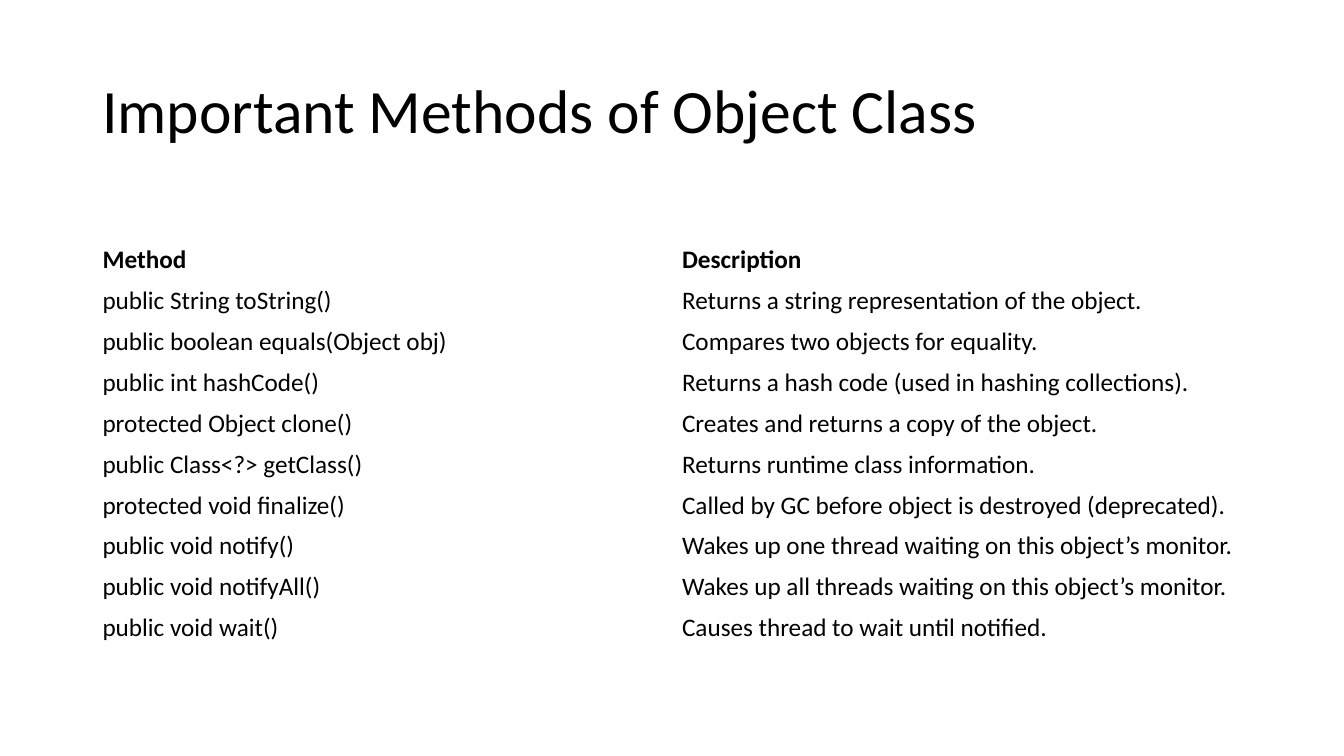
from pptx import Presentation
from pptx.dml.color import RGBColor
from pptx.enum import text
from pptx.util import Cm, Pt

# Content
HEADING = "Important Methods of Object Class"
METHODS = [
    ("Method", "Description"),
    ("public String toString()", "Returns a string representation of the object."),
    ("public boolean equals(Object obj)", "Compares two objects for equality."),
    ("public int hashCode()", "Returns a hash code (used in hashing collections)."),
    ("protected Object clone()", "Creates and returns a copy of the object."),
    ("public Class<?> getClass()", "Returns runtime class information."),
    ("protected void finalize()", "Called by GC before object is destroyed (deprecated)."),
    ("public void notify()", "Wakes up one thread waiting on this object’s monitor."),
    ("public void notifyAll()", "Wakes up all threads waiting on this object’s monitor."),
    ("public void wait()", "Causes thread to wait until notified."),
]

# Layout and formats
LEFT, WIDTH = Cm(2.33), Cm(29.21)
ROW_HEIGHT = Cm(1.03)
HEADING_FONT = {"name": "Calibri", "size": Pt(44), "bold": False}
HEADER_FONT = {"name": "Calibri", "size": Pt(18), "bold": True}
BODY_FONT = {**HEADER_FONT, "bold": False}


def paint(color, hex_value):
    color.rgb = RGBColor.from_string(hex_value)


def write(paragraph, words, font_format):
    run = paragraph.add_run()
    run.text = words
    for attribute, value in font_format.items():
        setattr(run.font, attribute, value)
    paint(run.font.color, "000000")


def main():
    deck = Presentation()
    deck.slide_width, deck.slide_height = Cm(33.87), Cm(19.05)
    slide = deck.slides.add_slide(deck.slide_layouts[6])

    # Heading
    heading = slide.shapes.add_textbox(LEFT, Cm(1.01), WIDTH, Cm(3.68)).text_frame
    heading.word_wrap = True
    heading.vertical_anchor = text.MSO_ANCHOR.MIDDLE
    heading.paragraphs[0].line_spacing = 0.9
    write(heading.paragraphs[0], HEADING, HEADING_FONT)

    # Method table
    methods = slide.shapes.add_table(
        len(METHODS), len(METHODS[0]), LEFT, Cm(6.04), WIDTH, ROW_HEIGHT * len(METHODS)
    ).table
    methods.first_row = methods.horz_banding = False
    for row_index, entries in enumerate(METHODS):
        methods.rows[row_index].height = ROW_HEIGHT
        for column_index, words in enumerate(entries):
            cell = methods.cell(row_index, column_index)
            cell.fill.background()
            cell.vertical_anchor = text.MSO_ANCHOR.MIDDLE
            font_format = BODY_FONT if row_index else HEADER_FONT
            write(cell.text_frame.paragraphs[0], words, font_format)

    deck.save("out.pptx")


if __name__ == "__main__":
    main()
